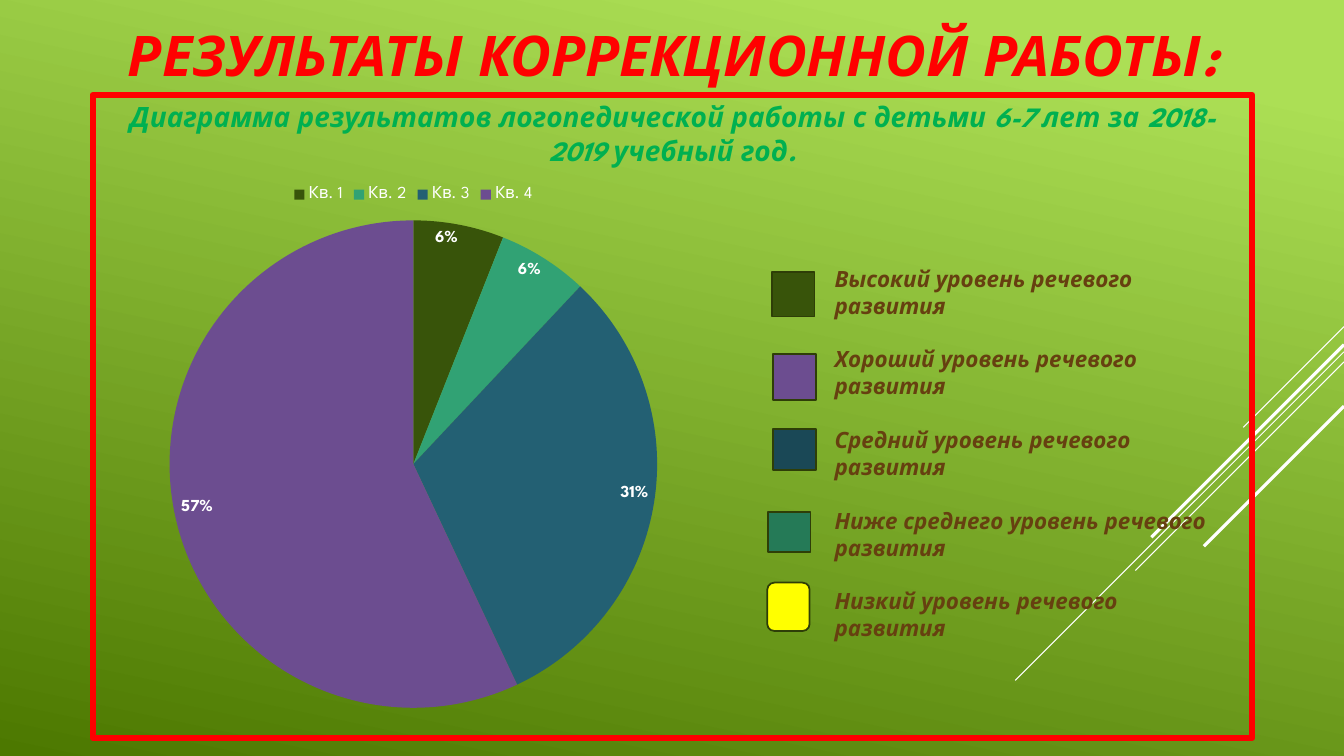
from dataclasses import dataclass

from lxml.etree import SubElement
from pptx import Presentation
from pptx.chart.data import CategoryChartData
from pptx.dml.color import RGBColor
from pptx.enum.chart import XL_CHART_TYPE, XL_LABEL_POSITION, XL_LEGEND_POSITION
from pptx.enum.shapes import MSO_CONNECTOR, MSO_SHAPE
from pptx.enum.text import MSO_ANCHOR, MSO_AUTO_SIZE, PP_ALIGN
from pptx.oxml.ns import qn
from pptx.slide import Slide
from pptx.text.text import Font, TextFrame
from pptx.util import Inches, Pt

FACE = "League Spartan"
COLORS = {
    "light": "ACDF55",
    "dark": "4C7800",
    "white": "FFFFFF",
    "red": "FF0000",
    "green": "00B050",
    "brown": "664010",
    "edge": "2E3E07",
    "olive": "38540A",
    "mint": "31A274",
    "teal": "236073",
    "purple": "6C4D90",
    "navy": "1A4856",
    "pine": "257A57",
    "yellow": "FFFF00",
}


@dataclass
class Ray:
    top: float
    run: float
    width: float


@dataclass
class Level:
    name: str
    color: str
    left: float
    top: float
    height: float
    kind: MSO_SHAPE = MSO_SHAPE.RECTANGLE


@dataclass
class Slice:
    name: str
    value: int
    color: str


RAYS = [
    Ray(3.24, 1, 0.75),
    Ray(3.49, 3.26, 0.75),
    Ray(3.59, 2.07, 0.75),
    Ray(3.42, 1.91, 2.25),
    Ray(4.03, 1.39, 2.25),
]
LEVELS = [
    Level("Высокий", "olive", 7.66, 2.7, 0.44),
    Level("Хороший", "purple", 7.67, 3.51, 0.46),
    Level("Средний", "navy", 7.67, 4.26, 0.4),
    Level("Ниже среднего", "pine", 7.62, 5.08, 0.4),
    Level("Низкий", "yellow", 7.61, 5.78, 0.48, MSO_SHAPE.ROUNDED_RECTANGLE),
]
SLICES = [
    Slice("Кв. 1", 6, "olive"),
    Slice("Кв. 2", 6, "mint"),
    Slice("Кв. 3", 31, "teal"),
    Slice("Кв. 4", 57, "purple"),
]


def tint(name: str) -> RGBColor:
    return RGBColor.from_string(COLORS[name])


def style(font: Font, size: float, color: str, bold: bool = False, slant: bool = False) -> None:
    font.name = FACE
    font.size = Pt(size)
    font.bold = bold
    font.italic = slant
    font.color.rgb = tint(color)


def write(frame: TextFrame, lines: list[str], size: float, color: str,
          align: PP_ALIGN = PP_ALIGN.LEFT, gap: float = 0) -> None:
    frame.word_wrap = True
    for index, line in enumerate(lines):
        para = frame.paragraphs[0] if index == 0 else frame.add_paragraph()
        para.alignment = align
        if index:
            para.space_before = Pt(gap)
        run = para.add_run()
        run.text = line
        style(run.font, size, color, True, True)


def paint(slide: Slide) -> None:
    fill = slide.background.fill
    fill.gradient()
    fill.gradient_angle = 360 - 102
    for stop, place, name in zip(fill.gradient_stops, (0.1, 1), ("light", "dark")):
        stop.position = place
        stop.color.rgb = tint(name)


def draw_ray(slide: Slide, ray: Ray) -> None:
    edge = 13.33
    line = slide.shapes.add_connector(
        MSO_CONNECTOR.STRAIGHT, Inches(edge), Inches(ray.top),
        Inches(edge - ray.run), Inches(ray.top + ray.run))
    line.line.color.rgb = tint("white")
    line.line.width = Pt(ray.width)
    SubElement(line._element.spPr, qn("a:effectLst"))


def draw_title(slide: Slide) -> None:
    box = slide.shapes.add_textbox(Inches(0.92), Inches(0.12), Inches(11.5), Inches(0.84))
    box.text_frame.vertical_anchor = MSO_ANCHOR.MIDDLE
    write(box.text_frame, ["РЕЗУЛЬТАТЫ КОРРЕКЦИОННОЙ РАБОТЫ:"], 40, "red", PP_ALIGN.CENTER)


def draw_frame(slide: Slide) -> None:
    box = slide.shapes.add_shape(
        MSO_SHAPE.RECTANGLE, Inches(0.92), Inches(0.94), Inches(11.5), Inches(6.38))
    box.shadow.inherit = False
    box.fill.background()
    box.line.color.rgb = tint("red")
    box.line.width = Pt(4.5)
    box.text_frame.vertical_anchor = MSO_ANCHOR.TOP
    text = ("Диаграмма результатов логопедической работы с детьми "
            "6-7 лет за 2018-2019 учебный год.")
    write(box.text_frame, [text], 20, "green", PP_ALIGN.CENTER)


def draw_names(slide: Slide) -> None:
    box = slide.shapes.add_textbox(Inches(8.18), Inches(2.58), Inches(3.94), Inches(2.79))
    box.text_frame.auto_size = MSO_AUTO_SIZE.SHAPE_TO_FIT_TEXT
    lines = [f"{level.name} уровень речевого развития" for level in LEVELS]
    write(box.text_frame, lines, 16, "brown", gap=19.2)


def draw_key(slide: Slide, level: Level) -> None:
    key = slide.shapes.add_shape(
        level.kind, Inches(level.left), Inches(level.top), Inches(0.42), Inches(level.height))
    key.shadow.inherit = False
    key.fill.solid()
    key.fill.fore_color.rgb = tint(level.color)
    key.line.color.rgb = tint("edge")
    key.line.width = Pt(1.25)


def draw_pie(slide: Slide) -> None:
    data = CategoryChartData()
    data.categories = [part.name for part in SLICES]
    data.add_series("Series 1", [part.value for part in SLICES])
    chart = slide.shapes.add_chart(
        XL_CHART_TYPE.PIE, Inches(0.88), Inches(1.74), Inches(6.44), Inches(5.42), data).chart
    style(chart.font, 10, "white")
    chart.has_title = False
    chart.has_legend = True
    chart.legend.position = XL_LEGEND_POSITION.TOP
    chart.legend.include_in_layout = False
    style(chart.legend.font, 12, "white")
    plot = chart.plots[0]
    plot.vary_by_categories = True
    series = plot.series[0]
    for index, part in enumerate(SLICES):
        fill = series.points[index].format.fill
        fill.solid()
        fill.fore_color.rgb = tint(part.color)
    labels = series.data_labels
    labels.show_value = False
    labels.show_percentage = True
    labels.number_format = "0%"
    labels.number_format_is_linked = False
    labels.position = XL_LABEL_POSITION.INSIDE_END
    style(labels.font, 12, "white", True)


def main() -> None:
    deck = Presentation()
    deck.slide_width = Inches(13.33)
    deck.slide_height = Inches(7.5)
    slide = deck.slides.add_slide(deck.slide_layouts[6])
    paint(slide)
    for ray in RAYS:
        draw_ray(slide, ray)
    draw_title(slide)
    draw_frame(slide)
    draw_names(slide)
    draw_pie(slide)
    for level in LEVELS:
        draw_key(slide, level)
    deck.save("out.pptx")


if __name__ == "__main__":
    main()
